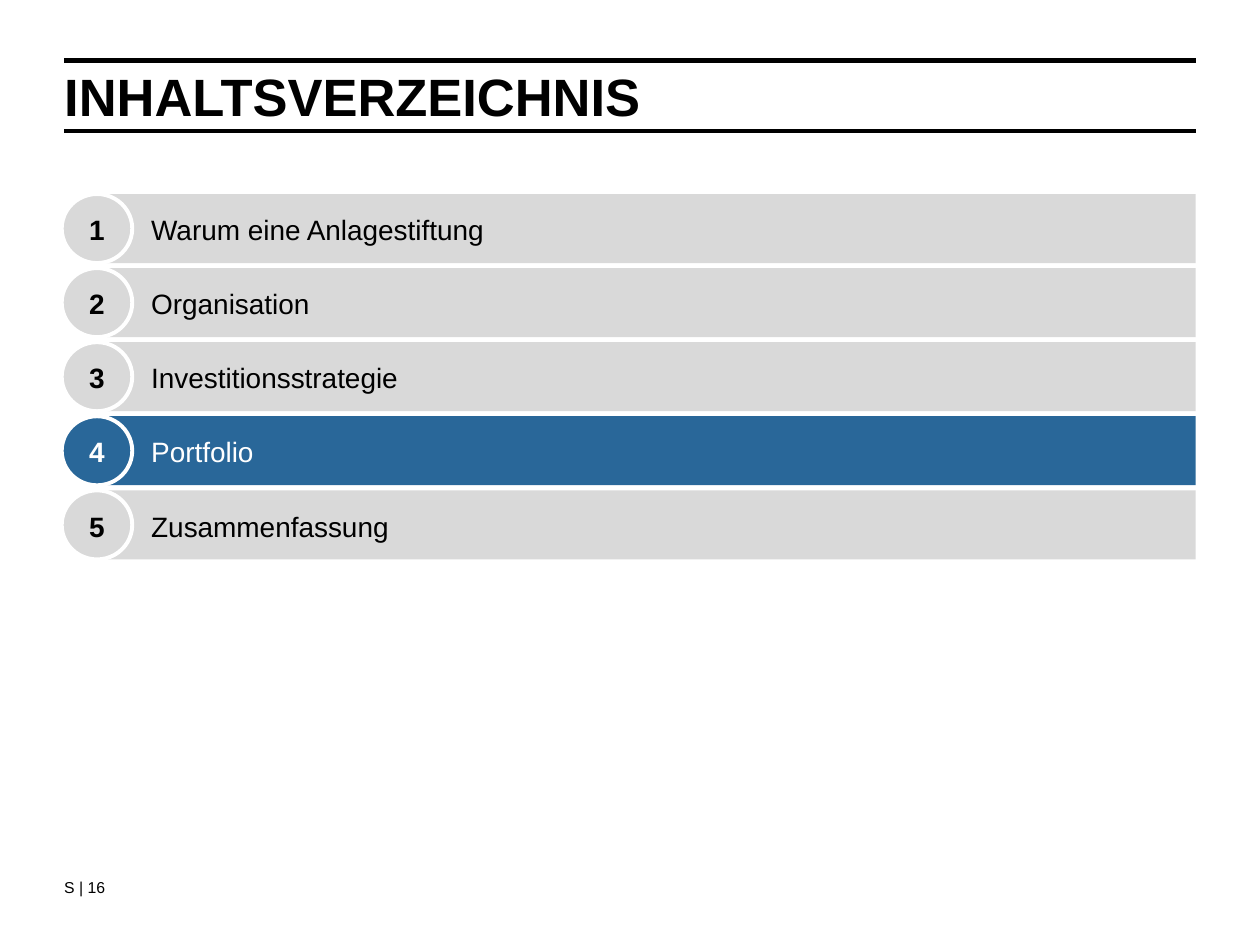
from lxml.etree import SubElement
from pptx import Presentation
from pptx.dml.color import RGBColor
from pptx.enum.shapes import MSO_CONNECTOR, MSO_SHAPE
from pptx.enum.text import MSO_ANCHOR, PP_ALIGN
from pptx.oxml.ns import qn
from pptx.util import Inches, Pt

WIDTH, HEIGHT = 10, 7.5
LEFT, RIGHT = 0.51, 9.49
BLACK, WHITE, GREY, BLUE = "000000", "FFFFFF", "D9D9D9", "296799"
CHAPTERS = ["Warum eine Anlagestiftung", "Organisation", "Investitionsstrategie",
            "Portfolio", "Zusammenfassung"]
CURRENT = 4


def color(value):
    return RGBColor.from_string(value)


def write(shape, text, size, ink=BLACK, bold=False, align=PP_ALIGN.LEFT,
          anchor=MSO_ANCHOR.TOP, insets=(0, 0, 0, 0), spacing=1.06):
    frame = shape.text_frame
    frame.word_wrap = True
    frame.vertical_anchor = anchor
    for side, inset in zip(("left", "top", "right", "bottom"), insets):
        setattr(frame, f"margin_{side}", Inches(inset))
    paragraph = frame.paragraphs[0]
    paragraph.text = text
    paragraph.alignment = align
    paragraph.line_spacing = spacing
    font_format = {"name": "Arial", "size": Pt(size), "bold": bold}
    for key, value in font_format.items():
        setattr(paragraph.font, key, value)
    paragraph.font.color.rgb = color(ink)


def add_text(slide, box, text, size, **options):
    write(slide.shapes.add_textbox(*map(Inches, box)), text, size, **options)


def add_rule(slide, left, right, y):
    rule = slide.shapes.add_connector(
        MSO_CONNECTOR.STRAIGHT, *map(Inches, (left, y, right, y)))
    rule.line.color.rgb = color(BLACK)
    rule.line.width = Pt(2.8)
    SubElement(rule._element.spPr, qn("a:effectLst"))


def add_filled(slide, kind, box, fill, outline=None):
    shape = slide.shapes.add_shape(kind, *map(Inches, box))
    shape.shadow.inherit = False
    shape.fill.solid()
    shape.fill.fore_color.rgb = color(fill)
    if outline:
        shape.line.color.rgb = color(outline)
        shape.line.width = Pt(2.25)
    else:
        shape.line.fill.background()
    return shape


def add_heading(slide, left, top, width, height, title):
    """Title between two horizontal rules."""
    for y in (top, top + height):
        add_rule(slide, left, left + width, y)
    add_text(slide, (left, top + 0.08, width, 0.39), title, 30, bold=True,
             insets=(0, 0.03, 0, 0), spacing=Pt(30))


def add_chapter(slide, left, top, width, height, number, name, active):
    """Bar with the chapter name, overlapped by its numbered disc."""
    fill, ink = (BLUE, WHITE) if active else (GREY, BLACK)
    disc_width = 0.56
    bar_left = left + disc_width / 2
    bar = add_filled(slide, MSO_SHAPE.RECTANGLE,
                     (bar_left, top, left + width - bar_left, height), fill)
    write(bar, name, 16, ink, anchor=MSO_ANCHOR.MIDDLE,
          insets=(0.43, 0.04, 0.04, 0.04))
    disc = add_filled(slide, MSO_SHAPE.OVAL, (left, top, disc_width, height), fill, WHITE)
    write(disc, str(number), 16, ink, bold=True, align=PP_ALIGN.CENTER,
          anchor=MSO_ANCHOR.MIDDLE, insets=(0.04,) * 4)


def add_contents(slide, left, top, width, height, chapters, current):
    gap = 0.04
    row = (height + gap) / len(chapters)
    for number, name in enumerate(chapters, 1):
        add_chapter(slide, left, top + (number - 1) * row, width, row - gap,
                    number, name, number == current)


def main():
    deck = Presentation()
    deck.slide_width, deck.slide_height = Inches(WIDTH), Inches(HEIGHT)
    slide = deck.slides.add_slide(deck.slide_layouts[6])
    add_heading(slide, LEFT, 0.48, RIGHT - LEFT, 0.56, "INHALTSVERZEICHNIS")
    add_contents(slide, 0.49, 1.54, RIGHT - 0.49, 2.9, CHAPTERS, CURRENT)
    add_text(slide, (LEFT, 6.94, 0.75, 0.28), "S | 16", 9, insets=(0, 0.02, 0, 0))
    deck.save("out.pptx")


if __name__ == "__main__":
    main()
